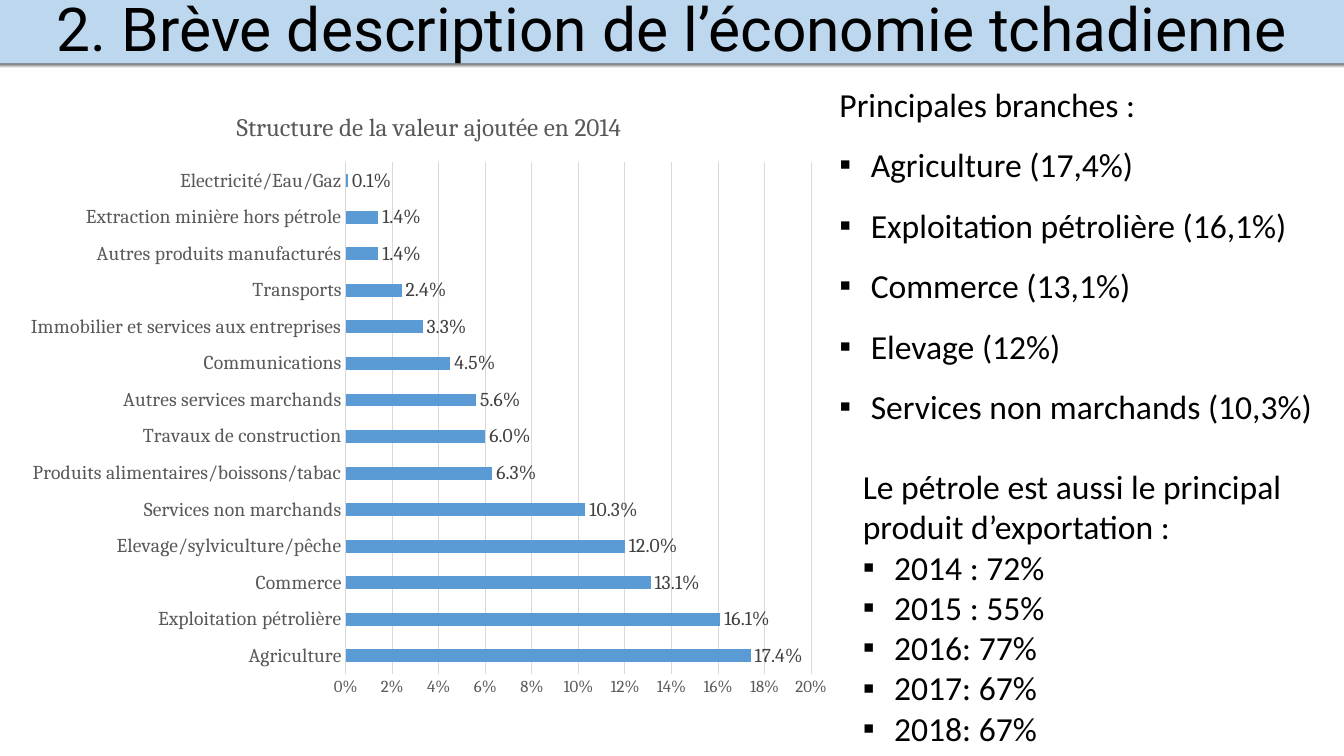
import pptx
import pptx.chart.data
import pptx.dml.color
import pptx.enum.chart
import pptx.enum.text
import pptx.oxml.xmlchemy
import pptx.util
from pptx.util import Cm

COLOURS = {
    "band": "BDD7EE",
    "bar": "5B9BD5",
    "grid": "D9D9D9",
    "axis": "595959",
    "label": "404040",
    "text": "000000",
    "paper": "FFFFFF",
}
SECTORS = [
    ("Agriculture", 0.174),
    ("Exploitation pétrolière", 0.161),
    ("Commerce", 0.131),
    ("Elevage/sylviculture/pêche", 0.12),
    ("Services non marchands", 0.103),
    ("Produits alimentaires/boissons/tabac", 0.063),
    ("Travaux de construction", 0.06),
    ("Autres services marchands", 0.056),
    ("Communications", 0.045),
    ("Immobilier et services aux entreprises", 0.033),
    ("Transports", 0.024),
    ("Autres produits manufacturés", 0.014),
    ("Extraction minière hors pétrole", 0.014),
    ("Electricité/Eau/Gaz", 0.001),
]
BRANCHES = [
    "Principales branches :",
    "Agriculture (17,4%)",
    "Exploitation pétrolière (16,1%)",
    "Commerce (13,1%)",
    "Elevage (12%)",
    "Services non marchands (10,3%)",
]
EXPORTS = [
    "Le pétrole est aussi le principal produit d’exportation :",
    "2014 : 72%",
    "2015 : 55%",
    "2016: 77%",
    "2017: 67%",
    "2018: 67%",
]


def colour(name):
    return pptx.dml.color.RGBColor.from_string(COLOURS[name])


def set_font(font, name, size, shade):
    font.name = name
    font.size = pptx.util.Pt(size)
    font.bold = False
    font.color.rgb = colour(shade)


def place(box, left, top, width, height):
    box.left, box.top, box.width, box.height = Cm(left), Cm(top), Cm(width), Cm(height)


def paint_background(page):
    fill = page.background.fill
    fill.gradient()
    fill.gradient_angle = 270
    stops = zip(fill.gradient_stops, (0.08, 0.09), ("text", "paper"))
    for stop, position, shade in stops:
        stop.position = position
        stop.color.rgb = colour(shade)


def add_title(page, text):
    box = page.shapes.title
    place(box, 0, 0, 33.87, 1.6)
    box.fill.solid()
    box.fill.fore_color.rgb = colour("band")
    frame = box.text_frame
    frame.text = text
    frame.auto_size = pptx.enum.text.MSO_AUTO_SIZE.NONE
    frame.vertical_anchor = pptx.enum.text.MSO_ANCHOR.MIDDLE
    para = frame.paragraphs[0]
    para.alignment = pptx.enum.text.PP_ALIGN.CENTER
    para.line_spacing = 0.9
    set_font(para.runs[0].font, "Roboto", 43.2, "text")


def set_bullet(para, symbol):
    properties = para._p.get_or_add_pPr()
    indent = Cm(0.79) if symbol else 0
    properties.set("marL", str(indent))
    properties.set("indent", str(-indent))
    if symbol:
        bullet = pptx.oxml.xmlchemy.OxmlElement("a:buChar")
        bullet.set("char", symbol)
    else:
        bullet = pptx.oxml.xmlchemy.OxmlElement("a:buNone")
    properties.append(bullet)


def fill_list(box, lines, spacing):
    frame = box.text_frame
    frame.text = "\n".join(lines)
    frame.word_wrap = True
    frame.auto_size = pptx.enum.text.MSO_AUTO_SIZE.SHAPE_TO_FIT_TEXT
    frame.vertical_anchor = pptx.enum.text.MSO_ANCHOR.TOP
    for index, para in enumerate(frame.paragraphs):
        para.line_spacing = spacing
        para.space_before = para.space_after = pptx.util.Pt(0)
        set_bullet(para, "▪" if index else None)
        set_font(para.runs[0].font, "Calibri", 24, "text")


def style_line(line, shade):
    line.color.rgb = colour(shade)
    line.width = pptx.util.Pt(0.75)


def style_axes(chart):
    no_tick = pptx.enum.chart.XL_TICK_MARK.NONE
    for axis, size in ((chart.category_axis, 14), (chart.value_axis, 12)):
        axis.major_tick_mark = axis.minor_tick_mark = no_tick
        set_font(axis.tick_labels.font, "Cambria", size, "axis")
    chart.category_axis.has_major_gridlines = False
    style_line(chart.category_axis.format.line, "grid")
    values = chart.value_axis
    values.minimum_scale, values.maximum_scale, values.major_unit = 0, 0.2, 0.02
    values.tick_labels.number_format = "0%"
    values.tick_labels.number_format_is_linked = False
    values.format.line.fill.background()
    values.has_major_gridlines = True
    style_line(values.major_gridlines.format.line, "grid")


def style_bars(plot):
    plot.gap_width = 182
    plot.vary_by_categories = False
    fill = plot.series[0].format.fill
    fill.solid()
    fill.fore_color.rgb = colour("bar")
    plot.has_data_labels = True
    labels = plot.data_labels
    labels.show_value = True
    labels.number_format = "0.0%"
    labels.number_format_is_linked = False
    labels.position = pptx.enum.chart.XL_LABEL_POSITION.OUTSIDE_END
    set_font(labels.font, "Cambria", 14, "label")


def add_sector_chart(page, title):
    data = pptx.chart.data.CategoryChartData(number_format="0.0%")
    names, shares = zip(*SECTORS)
    data.categories = names
    data.add_series("Series 1", shares)
    kind = pptx.enum.chart.XL_CHART_TYPE.BAR_CLUSTERED
    chart = page.shapes.add_chart(
        kind, Cm(0.36), Cm(2.21), Cm(20.9), Cm(15.67), data
    ).chart
    set_font(chart.font, "Calibri", 10, "text")
    chart.has_legend = False
    chart.has_title = True
    chart.chart_title.include_in_layout = False
    frame = chart.chart_title.text_frame
    frame.text = title
    set_font(frame.paragraphs[0].runs[0].font, "Cambria", 18, "axis")
    style_axes(chart)
    style_bars(chart.plots[0])


def main():
    deck = pptx.Presentation()
    deck.slide_width, deck.slide_height = Cm(33.87), Cm(19.05)
    page = deck.slides.add_slide(deck.slide_layouts.get_by_name("Two Content"))
    paint_background(page)
    add_title(page, "2. Brève description de l’économie tchadienne")
    add_sector_chart(page, "Structure de la valeur ajoutée en 2014")
    branches, exports = page.placeholders[1], page.placeholders[2]
    place(branches, 20.9, 1.47, 12.6, 10.26)
    fill_list(branches, BRANCHES, 1.5)
    place(exports, 21.49, 11.61, 11.81, 7.44)
    fill_list(exports, EXPORTS, 1.0)
    deck.save("out.pptx")


if __name__ == "__main__":
    main()
